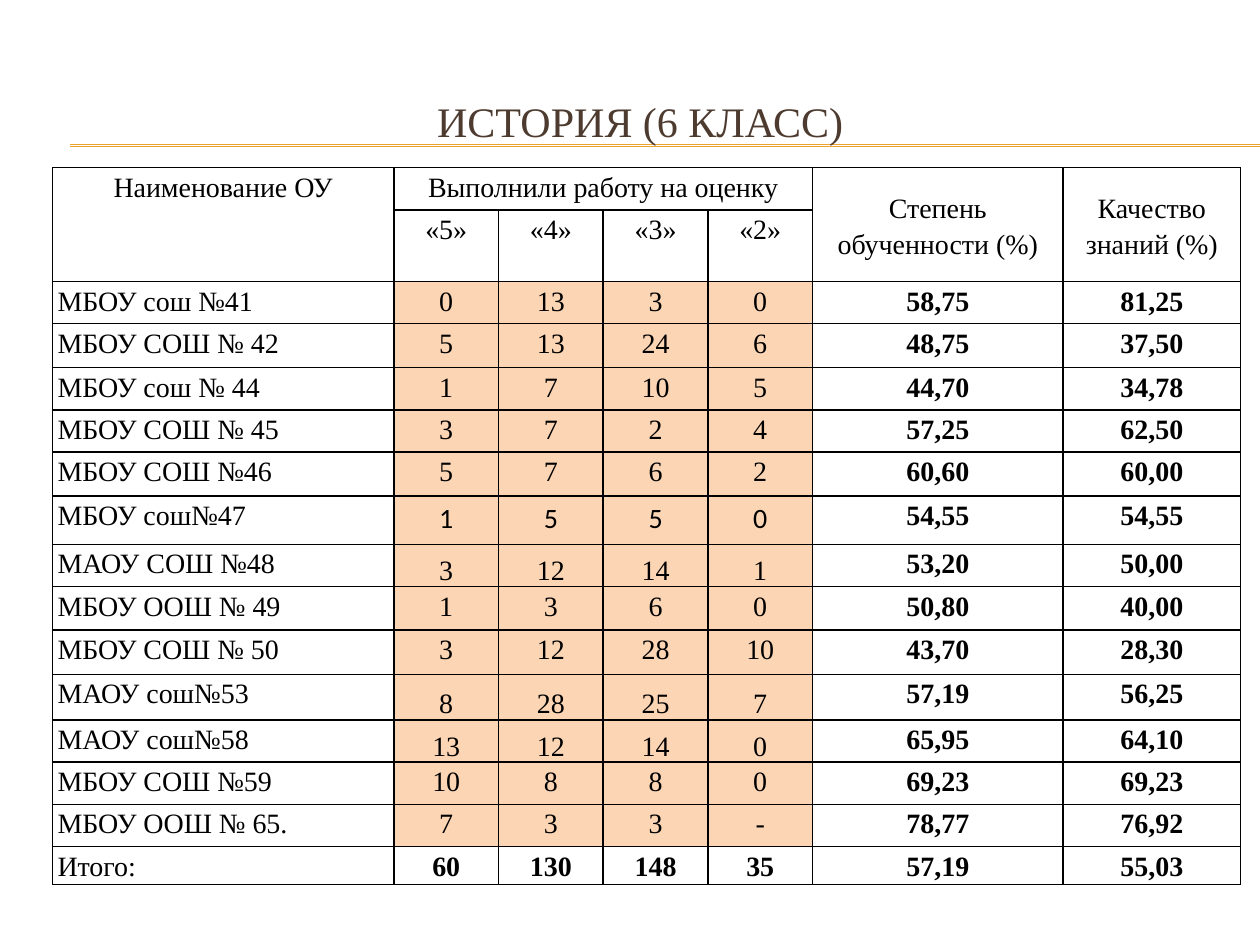
from lxml import etree
from pptx import Presentation
from pptx.dml.color import RGBColor
from pptx.enum.shapes import MSO_CONNECTOR
from pptx.enum.text import MSO_ANCHOR, PP_ALIGN
from pptx.oxml.ns import qn
from pptx.util import Cm, Pt

LINE = MSO_CONNECTOR.STRAIGHT
TOP, MIDDLE, BOTTOM = MSO_ANCHOR.TOP, MSO_ANCHOR.MIDDLE, MSO_ANCHOR.BOTTOM
LEFT, CENTER = PP_ALIGN.LEFT, PP_ALIGN.CENTER

BLACK = RGBColor(0x00, 0x00, 0x00)
WHITE = RGBColor(0xFF, 0xFF, 0xFF)
BROWN = RGBColor(0x4E, 0x3B, 0x30)
GOLD = RGBColor(0xF0, 0xA2, 0x2E)
PEACH = RGBColor(0xFC, 0xD5, 0xB4)
SERIF, SANS = "Times New Roman", "Calibri"

WIDTHS = [6.88] + [2.11] * 4 + [5.05, 3.58]
HEIGHTS = [0.85, 1.07, 0.85, 0.89, 0.85, 0.85, 0.89, 0.97,
           0.85, 0.88, 0.89, 0.92, 0.85, 0.85, 0.85, 0.77]

# Top row, left column, bottom row, right column, wording, anchor
HEADS = [
    (0, 0, 1, 0, "Наименование ОУ", TOP),
    (0, 1, 0, 4, "Выполнили работу на оценку", TOP),
    (0, 5, 1, 5, "Степень обученности (%)", MIDDLE),
    (0, 6, 1, 6, "Качество знаний (%)", MIDDLE),
] + [(1, col, 1, col, f"«{6 - col}»", TOP) for col in range(1, 5)]

SCHOOLS = [
    ("МБОУ сош №41", "0", "13", "3", "0", "58,75", "81,25"),
    ("МБОУ СОШ № 42", "5", "13", "24", "6", "48,75", "37,50"),
    ("МБОУ сош № 44", "1", "7", "10", "5", "44,70", "34,78"),
    ("МБОУ СОШ № 45", "3", "7", "2", "4", "57,25", "62,50"),
    ("МБОУ СОШ №46", "5", "7", "6", "2", "60,60", "60,00"),
    ("МБОУ сош№47", "1", "5", "5", "0", "54,55", "54,55"),
    ("МАОУ СОШ №48", "3", "12", "14", "1", "53,20", "50,00"),
    ("МБОУ ООШ № 49", "1", "3", "6", "0", "50,80", "40,00"),
    ("МБОУ СОШ № 50", "3", "12", "28", "10", "43,70", "28,30"),
    ("МАОУ сош№53", "8", "28", "25", "7", "57,19", "56,25"),
    ("МАОУ сош№58", "13", "12", "14", "0", "65,95", "64,10"),
    ("МБОУ СОШ №59", "10", "8", "8", "0", "69,23", "69,23"),
    ("МБОУ ООШ № 65.", "7", "3", "3", "-", "78,77", "76,92"),
]
TOTAL = ("Итого:", "60", "130", "148", "35", "57,19", "55,03")
SANS_ROWS = {"МБОУ сош№47"}
LOW_ROWS = {"МАОУ СОШ №48", "МАОУ сош№53", "МАОУ сош№58"}


def set_all(item, values):
    for name, value in values.items():
        setattr(item, name, value)


def add_rules(slide, left, top, width):
    for shift in (0, 0.03):
        y = Cm(top + shift)
        rule = slide.shapes.add_connector(
            LINE, Cm(left), y, Cm(left + width), y)
        rule.line.color.rgb = GOLD
        rule.line.width = Pt(0.75)
        etree.SubElement(rule._element.spPr, qn("a:effectLst"))


def place_title(slide, text, left, top, width, height):
    title = slide.shapes.title
    set_all(title, {"left": Cm(left), "top": Cm(top),
                    "width": Cm(width), "height": Cm(height)})
    frame = title.text_frame
    set_all(frame, {"text": text, "vertical_anchor": MIDDLE, "word_wrap": True})
    para = frame.paragraphs[0]
    para.alignment = CENTER
    font = para.runs[0].font
    set_all(font, {"name": SERIF, "size": Pt(24)})
    font.color.rgb = BROWN
    # The title lies in front of the rules
    slide.shapes._spTree.append(title._element)


def add_borders(cell):
    props = cell._tc.get_or_add_tcPr()
    for spot, side in enumerate(("lnL", "lnR", "lnT", "lnB")):
        edge = etree.Element(qn(f"a:{side}"), w=str(Pt(1)))
        fill = etree.SubElement(edge, qn("a:solidFill"))
        etree.SubElement(fill, qn("a:srgbClr"), val=str(BLACK))
        props.insert(spot, edge)


def fill_cell(cell, text, align=CENTER, anchor=TOP, bold=False, name=SERIF):
    cell.text = text
    cell.vertical_anchor = anchor
    para = cell.text_frame.paragraphs[0]
    set_all(para, {"alignment": align, "line_spacing": 1.15})
    font = para.runs[0].font
    set_all(font, {"name": name, "size": Pt(16), "bold": bold})
    font.color.rgb = BLACK


def paint(cell, color):
    if color is None:
        cell.fill.background()
    else:
        cell.fill.solid()
        cell.fill.fore_color.rgb = color


def fill_row(table, row, values, total=False):
    school = values[0]
    for col, text in enumerate(values):
        cell = table.cell(row, col)
        mark = 1 <= col <= 4
        fill_cell(
            cell, text,
            align=CENTER if col else LEFT,
            anchor=BOTTOM if mark and school in LOW_ROWS else TOP,
            bold=col > 4 or (total and mark),
            name=SANS if mark and school in SANS_ROWS else SERIF)
        if not total and col < 5:
            paint(cell, PEACH if mark else WHITE)


def add_grades(slide, left, top):
    table = slide.shapes.add_table(
        len(HEIGHTS), len(WIDTHS), Cm(left), Cm(top),
        Cm(sum(WIDTHS)), Cm(sum(HEIGHTS))).table
    set_all(table, {"first_row": False, "horz_banding": False})
    for column, width in zip(table.columns, WIDTHS):
        column.width = Cm(width)
    for row, height in zip(table.rows, HEIGHTS):
        row.height = Cm(height)
    for cell in table.iter_cells():
        set_all(cell, {"margin_left": Cm(0.1), "margin_right": Cm(0.1),
                       "margin_top": 0, "margin_bottom": 0})
        paint(cell, None)
        add_borders(cell)
    for row, col, last_row, last_col, text, anchor in HEADS:
        cell = table.cell(row, col)
        if (row, col) != (last_row, last_col):
            cell.merge(table.cell(last_row, last_col))
        fill_cell(cell, text, anchor=anchor)
    for row, values in enumerate(SCHOOLS, start=2):
        fill_row(table, row, values)
    fill_row(table, len(HEIGHTS) - 1, TOTAL, total=True)


def main():
    deck = Presentation()
    set_all(deck, {"slide_width": Cm(25.4), "slide_height": Cm(19.05)})
    slide = deck.slides.add_slide(deck.slide_layouts[5])
    add_rules(slide, 1.42, 2.92, 23.98)
    place_title(slide, "ИСТОРИЯ (6 КЛАСС)", 0.84, 1.27, 24.13, 2.34)
    add_grades(slide, 1.06, 3.38)
    deck.save("out.pptx")


if __name__ == "__main__":
    main()
